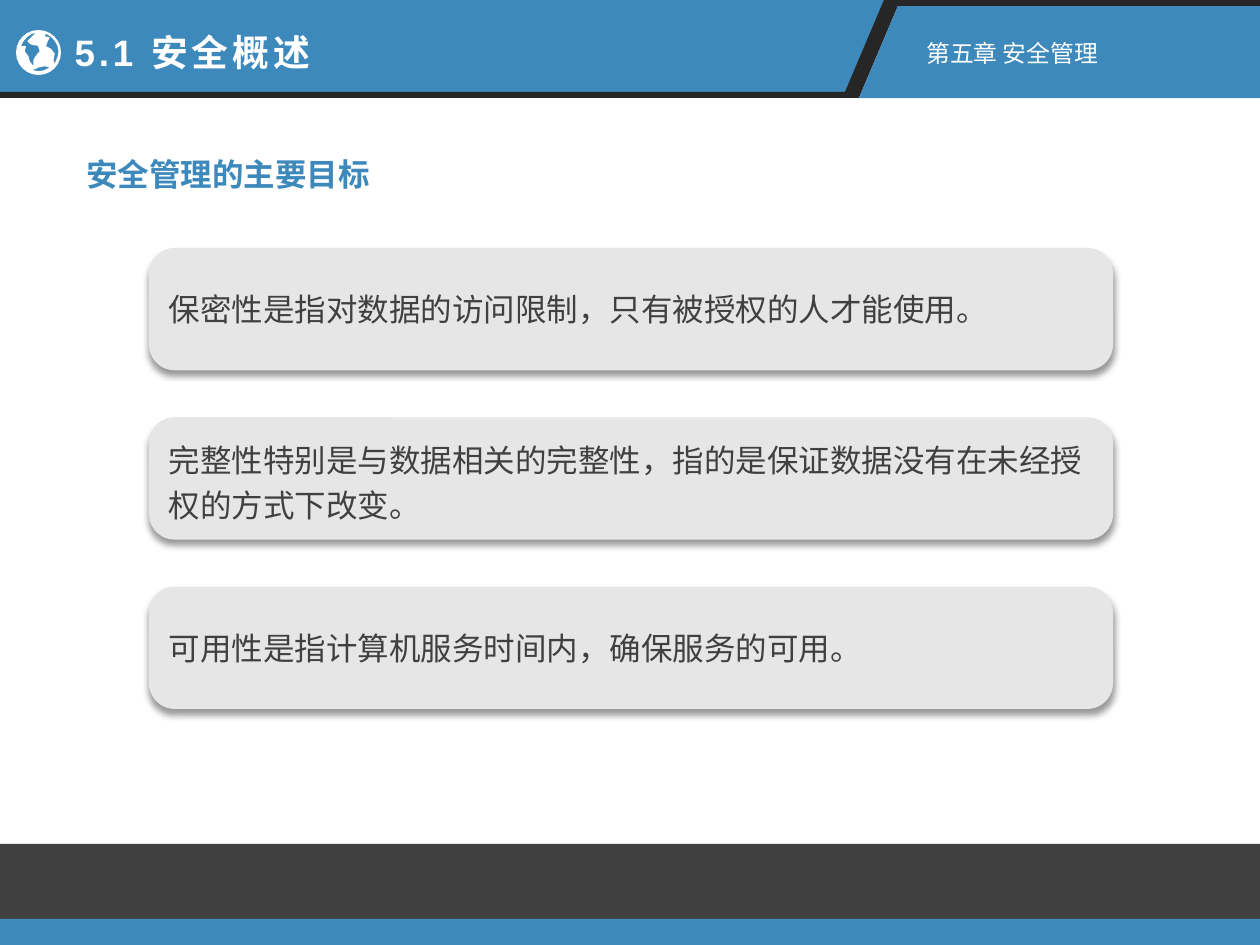
import math

from lxml import etree
from dataclasses import dataclass
from pptx import Presentation
from pptx.dml.color import RGBColor
from pptx.enum.shapes import MSO_SHAPE
from pptx.enum.text import MSO_ANCHOR, PP_ALIGN
from pptx.oxml.ns import qn
from pptx.util import Pt

RECT, ROUND_RECT = MSO_SHAPE.RECTANGLE, MSO_SHAPE.ROUNDED_RECTANGLE
LEFT, MIDDLE = PP_ALIGN.LEFT, MSO_ANCHOR.MIDDLE
PX = 914400 / 126
SLIDE_W, SLIDE_H = 1260, 945


@dataclass(frozen=True)
class Theme:
    blue: str = "3D89BC"
    black: str = "262626"
    dark: str = "404040"
    card: str = "E6E6E6"
    white: str = "FFFFFF"
    font: str = "Arial"
    heading_font: str = "Noto Sans CJK SC"
    title: float = 21
    body: float = 18
    chapter: float = 13.6


THEME = Theme()

CARDS = [
    ("保密性是指对数据的访问限制，只有被授权的人才能使用。", 1.0),
    ("完整性特别是与数据相关的完整性，指的是保证数据没有在未经授权的方式下改变。", 1.2),
    ("可用性是指计算机服务时间内，确保服务的可用。", 1.0),
]

# Each contour is a start point followed by cubic curves, on a 36 x 36 grid.
GLOBE_GRID = 36
GLOBE = [
    [(18, 0), (8, 0, 0, 8, 0, 18), (0, 28, 8, 36, 18, 36),
     (28, 36, 36, 28, 36, 18), (36, 8, 28, 0, 18, 0)],
    [(34, 17), (34, 21, 32, 24, 31, 27), (30, 27, 29, 25, 30, 24),
     (31, 23, 31, 20, 31, 19), (31, 18, 30, 15, 28, 15),
     (27, 15, 26, 15, 24, 13), (23, 9, 28, 8, 27, 6),
     (26, 5, 23, 9, 23, 5), (23, 4, 23, 4, 24, 3), (29, 5, 34, 11, 34, 17)],
    [(16, 2), (16, 3, 15, 4, 14, 4), (13, 5, 12, 5, 12, 6),
     (11, 7, 9, 9, 9, 9), (9, 10, 10, 12, 11, 11), (11, 11, 12, 11, 13, 12),
     (15, 12, 21, 12, 19, 17), (18, 19, 16, 19, 15, 22),
     (15, 22, 14, 24, 14, 24), (14, 25, 15, 29, 14, 29),
     (13, 29, 11, 26, 11, 25), (11, 24, 10, 23, 10, 21),
     (10, 20, 7, 20, 7, 17), (7, 15, 8, 14, 8, 13),
     (8, 13, 5, 13, 4, 13), (6, 7, 11, 3, 16, 2)],
    [(13, 32), (15, 32, 15, 31, 16, 31), (16, 31, 17, 31, 18, 30),
     (19, 30, 21, 29, 23, 29), (24, 29, 26, 29, 27, 30),
     (24, 32, 21, 33, 18, 33), (16, 33, 15, 32, 13, 32)],
]


def emu(*lengths):
    return [round(v * PX) for v in lengths]


def rgb(color):
    return RGBColor.from_string(color)


def paint(sp, color):
    sp.shadow.inherit = False
    sp.fill.solid()
    sp.fill.fore_color.rgb = rgb(color)
    sp.line.fill.background()
    return sp


def add_block(s, kind, box, color):
    return paint(s.shapes.add_shape(kind, *emu(*box)), color)


def add_outline(s, origin, contours, color):
    """Draw closed contours, given in px from origin, as one filled shape."""
    ox, oy = origin
    paths = [[emu(ox + x, oy + y) for x, y in c] for c in contours]
    builder = s.shapes.build_freeform(*paths[0][0], scale=1.0)
    for i, points in enumerate(paths):
        if i:
            builder.move_to(*points[0])
        builder.add_line_segments(points[1:], close=True)
    return paint(builder.convert_to_shape(), color)


def set_font(p, size, color, name=THEME.font, bold=False):
    font = p.font
    font.size, font.name, font.bold = Pt(size), name, bold
    font.color.rgb = rgb(color)


def add_label(s, box, text, *font_args, **font_options):
    tf = s.shapes.add_textbox(*emu(*box)).text_frame
    tf.word_wrap = True
    p = tf.paragraphs[0]
    p.text = text
    set_font(p, *font_args, **font_options)


def curve_points(contour):
    """Turn cubic curves into points, with more of them on longer curves."""
    points = [contour[0]]
    for x1, y1, x2, y2, x3, y3 in contour[1:]:
        x0, y0 = points[-1]
        steps = max(1, round(math.dist((x0, y0), (x3, y3)) / 4))
        for i in range(1, steps + 1):
            t = i / steps
            u = 1 - t
            a, b, c, d = u ** 3, 3 * u * u * t, 3 * u * t * t, t ** 3
            points.append((a * x0 + b * x1 + c * x2 + d * x3,
                           a * y0 + b * y1 + c * y2 + d * y3))
    return points


def add_globe(s, box):
    left, top, size, _ = box
    k = size / GLOBE_GRID
    contours = [[(x * k, y * k) for x, y in curve_points(c)] for c in GLOBE]
    add_outline(s, (left, top), contours, THEME.white)


def place_title(s, box):
    title = s.shapes.title
    title.element.getparent().append(title.element)  # in front of the header
    title.left, title.top, title.width, title.height = emu(*box)
    tf = title.text_frame
    tf.word_wrap = True
    tf.vertical_anchor = MIDDLE
    p = tf.paragraphs[0]
    p.text, p.alignment = "5.1 安全概述", LEFT
    p.runs[0].font._element.set("spc", "220")
    set_font(p, THEME.title, THEME.white, bold=True)


def add_header(s, box):
    x, y, w, h = box
    bar = h - 6
    add_outline(s, (x, y), [[(0, 0), (888, 0), (849, bar), (0, bar)]], THEME.blue)
    add_outline(s, (x, y), [[(884, 0), (w, 0), (w, 6), (898, 6), (859, h),
                             (0, h), (0, bar), (845, bar)]], THEME.black)
    add_outline(s, (x, y), [[(898, 6), (w, 6), (w, h), (859, h)]], THEME.blue)
    place_title(s, (x + 62, y + 23, 282, 57))
    add_globe(s, (x + 16, y + 30, 45, 45))
    add_label(s, (x + 914, y + 32, 200, 42), "第五章 安全管理",
              THEME.chapter, THEME.white)


def add_card_shadow(sp):
    effects = sp._element.spPr.find(qn("a:effectLst"))
    shadow = etree.SubElement(effects, qn("a:outerShdw"), blurRad=str(Pt(4)),
                              dist=str(Pt(3)), dir="5400000", rotWithShape="0")
    color = etree.SubElement(shadow, qn("a:srgbClr"), val="000000")
    etree.SubElement(color, qn("a:alpha"), val="40000")


def add_cards(s, box, gap=47):
    x, y, w, h = box
    card_h = (h - gap * (len(CARDS) - 1)) / len(CARDS)
    for i, (text, spacing) in enumerate(CARDS):
        sp = add_block(s, ROUND_RECT, (x, y + i * (card_h + gap), w, card_h),
                       THEME.card)
        sp.adjustments[0] = 0.21
        add_card_shadow(sp)
        tf = sp.text_frame
        tf.word_wrap = True
        tf.vertical_anchor = MIDDLE
        p = tf.paragraphs[0]
        p.text, p.alignment, p.line_spacing = text, LEFT, spacing
        set_font(p, THEME.body, THEME.dark)


def add_footer(s, box):
    x, y, w, h = box
    stripe = 26
    add_block(s, RECT, (x, y, w, h - stripe), THEME.dark)
    add_block(s, RECT, (x, y + h - stripe, w, stripe), THEME.blue)


def main():
    prs = Presentation()
    prs.slide_width, prs.slide_height = emu(SLIDE_W, SLIDE_H)
    s = prs.slides.add_slide(prs.slide_layouts[5])
    add_footer(s, (0, 844, SLIDE_W, 101))
    add_header(s, (0, 0, SLIDE_W, 98))
    add_label(s, (74, 149, 312, 50), "安全管理的主要目标", THEME.body,
              THEME.blue, name=THEME.heading_font, bold=True)
    add_cards(s, (149, 248, 964, 461))
    prs.save("out.pptx")


if __name__ == "__main__":
    main()
